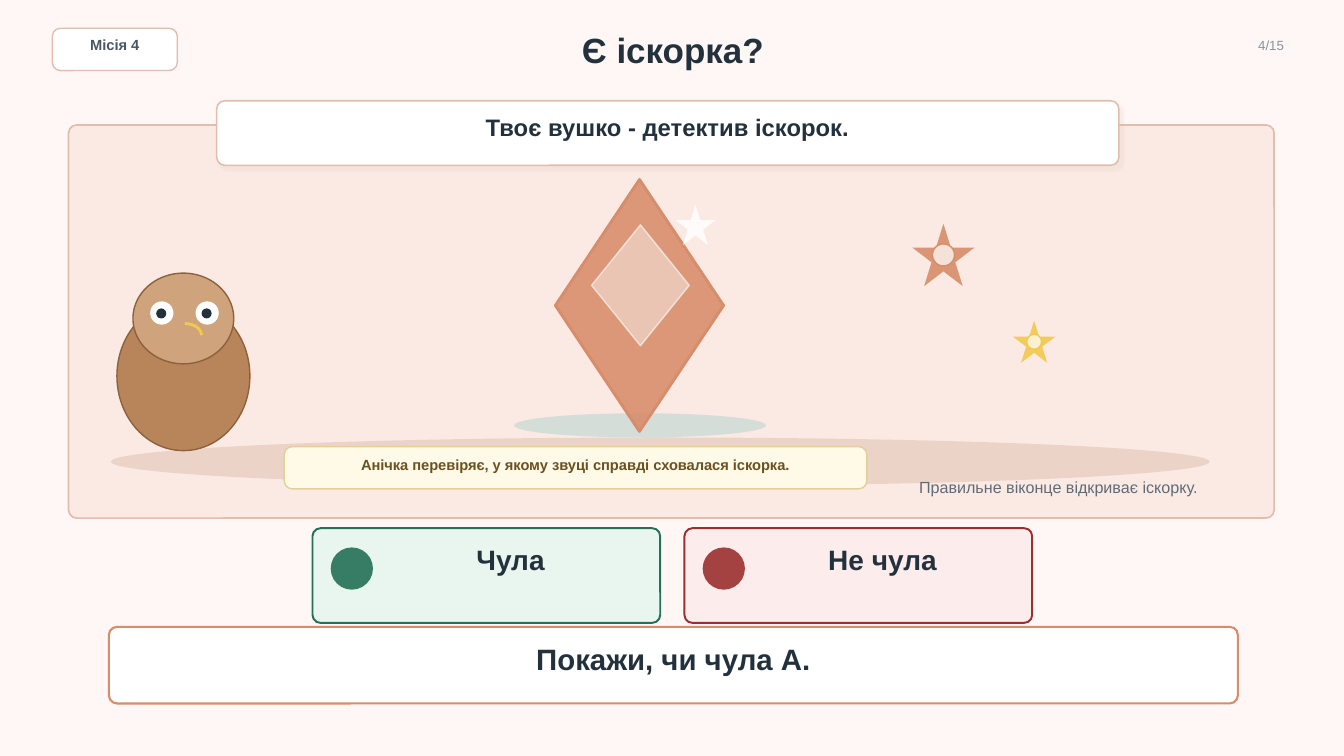
"""Builds the listening-game slide with an owl, a gem and two answer cards."""
import pptx
import pptx.util
import pptx.dml.color
import pptx.enum.shapes
import pptx.enum.text
import pptx.oxml
import pptx.oxml.ns

Pt = pptx.util.Pt
KIND = pptx.enum.shapes.MSO_SHAPE
ALIGN = pptx.enum.text.PP_ALIGN
INK, WHITE, CORAL, BLUSH, GOLD, BARK = "23313D", "FFFFFF", "D78C6A", "E2BDAE", "F2C94C", "8C623E"
CORNER_RADIUS = 5.76


def paint(fill, color, opacity=100):
    """Give a fill a solid colour, with an opacity in percent."""
    fill.solid()
    fill.fore_color.rgb = pptx.dml.color.RGBColor.from_string(color)
    if opacity < 100:
        tint = fill._xPr.find(".//" + pptx.oxml.ns.qn("a:srgbClr"))
        alpha = pptx.oxml.parse_xml(f'<a:alpha {pptx.oxml.ns.nsdecls("a")} val="{opacity * 1000}"/>')
        tint.append(alpha)


def write(box, place, text, size, color, bold=True, align=ALIGN.CENTER):
    """Place a text box or placeholder and set its single run."""
    box.left, box.top, box.width, box.height = [Pt(length) for length in place]
    frame = box.text_frame
    frame.auto_size = pptx.enum.text.MSO_AUTO_SIZE.NONE
    frame.word_wrap = True
    frame.vertical_anchor = pptx.enum.text.MSO_ANCHOR.MIDDLE
    frame.margin_left = frame.margin_top = frame.margin_right = frame.margin_bottom = 0
    para = frame.paragraphs[0]
    para.alignment = align
    span = para.add_run()
    span.text = text
    span.font.name = "Arial"
    span.font.size = Pt(size)
    span.font.bold = bold
    paint(span.font.fill, color)


deck = pptx.Presentation()
deck.slide_width, deck.slide_height = Pt(960), Pt(540)
page = deck.slides.add_slide(deck.slide_layouts[5])
paint(page.background.fill, "FFF7F5")
write(page.shapes.title, (144, 18, 673.2, 34.6), "Є іскорка?", 25, INK)

# kind, place, fill, fill opacity, line, line width, line opacity
figures = [
    (KIND.ROUNDED_RECTANGLE, (37.4, 20.2, 89.3, 30.2), WHITE, 100, BLUSH, 1, 100),
    (KIND.ROUNDED_RECTANGLE, (49, 89.3, 861.1, 280.8), "FBEAE4", 100, BLUSH, 1.2, 100),
    (KIND.OVAL, (79.2, 312.5, 784.8, 34.6), "EAD3C5", 92, None, 0, 100),
    (KIND.OVAL, (83.5, 215.3, 95, 106.6), "B8845A", 100, BARK, 1, 100),
    (KIND.OVAL, (95, 195.1, 72, 64.8), "CFA47C", 100, BARK, 1, 100),
]
for eye_left in (107.3, 139.7):
    figures.append((KIND.OVAL, (eye_left, 215.3, 16.6, 16.6), WHITE, 100, None, 0, 100))
    figures.append((KIND.OVAL, (eye_left + 4.3, 220.3, 7.2, 7.2), INK, 100, None, 0, 100))
figures += [
    (KIND.ARC, (120.2, 231.1, 23.8, 16.6), None, 100, GOLD, 2, 100),
    (KIND.OVAL, (367.2, 295.2, 180, 17.3), "C9D9D5", 75, None, 0, 100),
    (KIND.DIAMOND, (396.7, 128.2, 120.2, 180), CORAL, 88, CORAL, 2, 100),
    (KIND.DIAMOND, (422.6, 160.6, 69.8, 86.4), WHITE, 45, WHITE, 1, 60),
    (KIND.STAR_5_POINT, (482.4, 146.2, 28.8, 28.8), WHITE, 82, None, 0, 100),
]
for left, top, size, core, color in ((651.6, 159.8, 44.6, 15.8, CORAL), (723.6, 229, 30.2, 10.8, GOLD)):
    inset = (size - core) / 2
    figures.append((KIND.STAR_5_POINT, (left, top, size, size), color, 90, None, 0, 100))
    figures.append((KIND.OVAL, (left + inset, top + inset, core, core), WHITE, 72, color, 1, 100))
banner_place = (154.8, 72, 644.4, 46.1)
figures += [
    (KIND.ROUNDED_RECTANGLE, banner_place, WHITE, 100, BLUSH, 1.1, 100),
    (KIND.ROUNDED_RECTANGLE, (203, 319, 416.2, 30.2), "FFF9E8", 100, "E4CF98", 1, 100),
    (KIND.ROUNDED_RECTANGLE, (77.8, 447.8, 806.4, 54.7), WHITE, 100, CORAL, 1.5, 100),
]
answers = [(223.2, "Чула", "E9F6F0", "247058"), (488.9, "Не чула", "FDECEC", "9B2F2F")]
for left, answer, pale, strong in answers:
    figures.append((KIND.ROUNDED_RECTANGLE, (left, 377.3, 248.4, 67.7), pale, 100, strong, 1.4, 100))
    figures.append((KIND.OVAL, (left + 13, 391, 30.2, 30.2), strong, 90, None, 0, 100))

for kind, place, fill, opacity, line, line_width, line_opacity in figures:
    shape = page.shapes.add_shape(kind, *[Pt(length) for length in place])
    shape.shadow.inherit = False
    if kind == KIND.ROUNDED_RECTANGLE:
        shape.adjustments[0] = CORNER_RADIUS / place[3]
    if fill:
        paint(shape.fill, fill, opacity)
    else:
        shape.fill.background()
    if line:
        paint(shape.line.fill, line, line_opacity)
        shape.line.width = Pt(line_width)
    else:
        shape.line.fill.background()
    if place == banner_place:
        effects = shape._element.spPr.find(pptx.oxml.ns.qn("a:effectLst"))
        effects.append(pptx.oxml.parse_xml(
            f'<a:outerShdw {pptx.oxml.ns.nsdecls("a")} blurRad="{Pt(1)}" dist="{Pt(4)}" dir="2700000" '
            'algn="tl" rotWithShape="0"><a:srgbClr val="C8C1B0"><a:alpha val="16000"/></a:srgbClr></a:outerShdw>'))

labels = [
    ((44.6, 26.6, 74.9, 10.8), "Місія 4", 10.5, "4B5563", True, ALIGN.CENTER),
    ((865.4, 26.6, 51.8, 11.5), "4/15", 9.5, "8A929A", False, ALIGN.RIGHT),
    ((171.4, 81.4, 610.6, 18.7), "Твоє вушко - детектив іскорок.", 17, INK, True, ALIGN.CENTER),
    ((214.6, 325.4, 393.1, 13), "Анічка перевіряє, у якому звуці справді сховалася іскорка.",
     10.5, "6B5120", True, ALIGN.CENTER),
    ((96.5, 460.1, 769, 20.2), "Покажи, чи чула А.", 21, INK, True, ALIGN.CENTER),
    ((648, 339.8, 216, 15.8), "Правильне віконце відкриває іскорку.", 11.5, "5E6C78", False, ALIGN.CENTER),
]
for left, answer, pale, strong in answers:
    labels.append(((left + 47.5, 387.4, 187.9, 24.5), answer, 20, INK, True, ALIGN.CENTER))
for label in labels:
    write(page.shapes.add_textbox(0, 0, 0, 0), *label)

deck.save("out.pptx")
